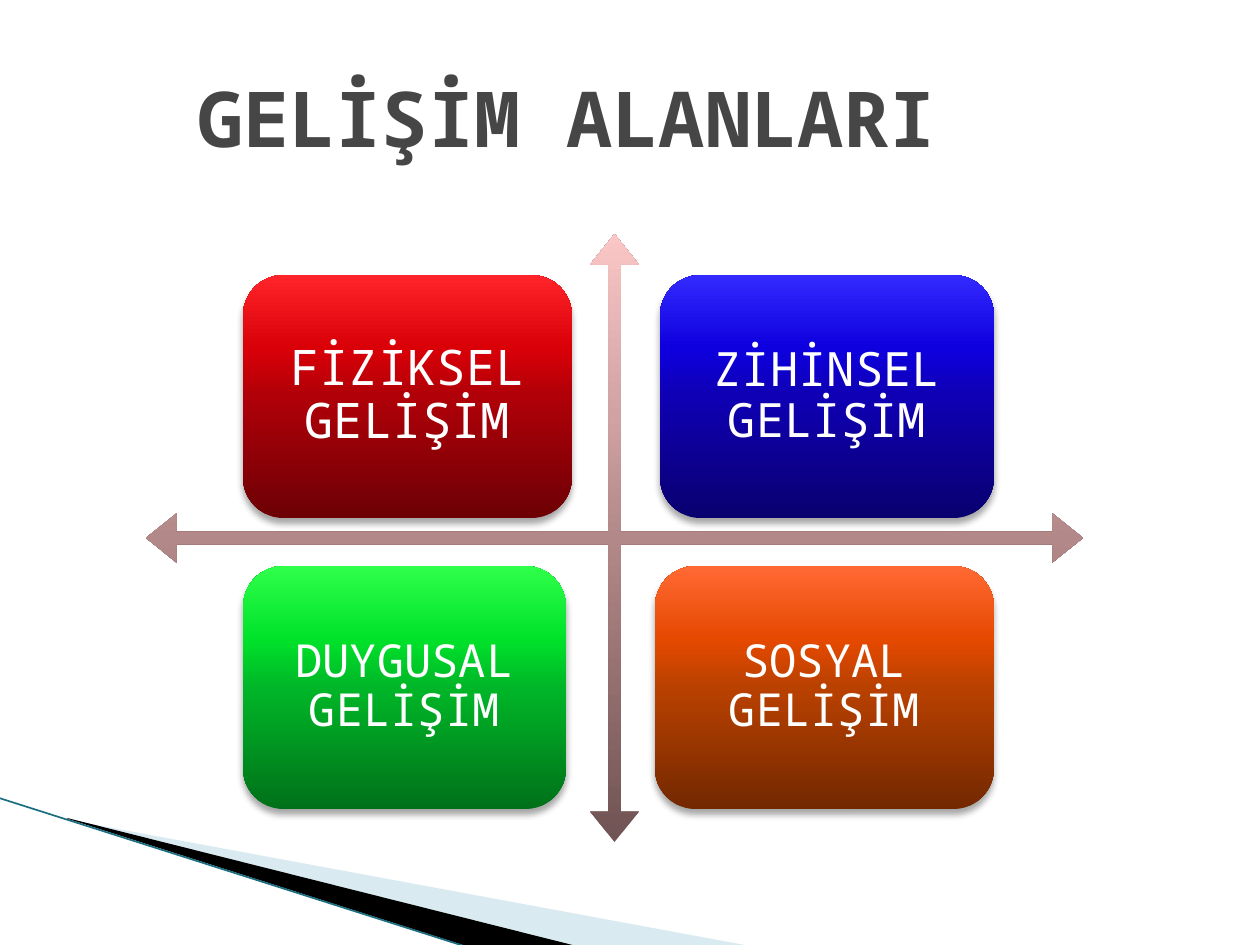
from lxml import etree
from pptx import Presentation
from pptx.dml.color import RGBColor
from pptx.enum.shapes import MSO_CONNECTOR, MSO_SHAPE
from pptx.enum.text import MSO_ANCHOR, PP_ALIGN
from pptx.oxml import parse_xml
from pptx.oxml.ns import nsdecls, qn
from pptx.util import Emu, Pt

STRAIGHT = MSO_CONNECTOR.STRAIGHT
QUAD_ARROW = MSO_SHAPE.QUAD_ARROW
ROUNDED = MSO_SHAPE.ROUNDED_RECTANGLE
MIDDLE = MSO_ANCHOR.MIDDLE
CENTER = PP_ALIGN.CENTER

SCALE = 914400 / 126
FONT = "Noto Sans Mono"
TITLE_ONLY = 5

WHITE = RGBColor(0xFF, 0xFF, 0xFF)
BLACK = RGBColor(0x00, 0x00, 0x00)
GREY = RGBColor(0x46, 0x46, 0x46)
PALE_BLUE = RGBColor(0xA0, 0xCB, 0xDC)
TEAL = RGBColor(0x1A, 0x6E, 0x80)


def rgbs(*codes):
    return [RGBColor.from_string(code) for code in codes]


STOPS = (0, 50, 70, 100)
ROSE = rgbs("705354", "B38888", "D0A2A2", "FBC6C6")
RED = rgbs("6D0005", "B00008", "DA0008", "FF2429")
BLUE = rgbs("09006F", "0F00B3", "0E00DE", "332AFF")
GREEN = rgbs("007119", "00B628", "00E22A", "2FFF4B")
ORANGE = rgbs("732800", "B94100", "E64900", "FF6933")

# label, left, top, width, font size, gradient
TILE_HEIGHT = 243
TILES = [
    ("FİZİKSEL GELİŞİM", 243, 275, 329, 28, RED),
    ("ZİHİNSEL GELİŞİM", 660, 275, 334, 27, BLUE),
    ("DUYGUSAL GELİŞİM", 243, 566, 323, 26, GREEN),
    ("SOSYAL GELİŞİM", 655, 566, 339, 26, ORANGE),
]


def px(n):
    return Emu(round(n * SCALE))


def fill_upward(sp, colors):
    """Fill a shape with a gradient running from bottom to top."""
    stops = "".join(
        f'<a:gs pos="{pos * 1000}"><a:srgbClr val="{color}"/></a:gs>'
        for pos, color in zip(STOPS, colors))
    grad = parse_xml(
        f'<a:gradFill {nsdecls("a")} rotWithShape="1"><a:gsLst>{stops}</a:gsLst>'
        f'<a:lin ang="{270 * 60000}" scaled="0"/></a:gradFill>')
    sp._element.spPr.find(qn("a:prstGeom")).addnext(grad)
    sp.line.fill.background()
    sp.shadow.inherit = False


def add_soft_shadow(sp):
    effects = sp._element.spPr.find(qn("a:effectLst"))
    effects.append(parse_xml(
        f'<a:outerShdw {nsdecls("a")} blurRad="{Pt(4)}" dist="{Pt(3)}" '
        f'dir="{90 * 60000}" rotWithShape="0">'
        f'<a:srgbClr val="{BLACK}"><a:alpha val="35000"/></a:srgbClr></a:outerShdw>'))


def write_text(sp, text, size, color, bold=False):
    tf = sp.text_frame
    tf.word_wrap = True
    tf.vertical_anchor = MIDDLE
    p = tf.paragraphs[0]
    p.text = text
    p.alignment = CENTER
    p.font.name = FONT
    p.font.size = Pt(size)
    p.font.bold = bold
    p.font.color.rgb = color
    return tf


def add_wedge(slide, points, color, opacity=100):
    builder = slide.shapes.build_freeform(*points[0], scale=SCALE)
    builder.add_line_segments(points[1:], close=True)
    sp = builder.convert_to_shape()
    sp.fill.solid()
    sp.fill.fore_color.rgb = color
    sp.line.fill.background()
    sp.shadow.inherit = False
    if opacity < 100:
        clr = sp._element.spPr.find(qn("a:solidFill"))[0]
        etree.SubElement(clr, qn("a:alpha")).set("val", str(opacity * 1000))


def add_edge(slide, x1, y1, x2, y2):
    line = slide.shapes.add_connector(STRAIGHT, px(x1), px(y1), px(x2), px(y2))
    line.line.color.rgb = TEAL
    line.line.width = Pt(0.95)
    etree.SubElement(line._element.spPr, qn("a:effectLst"))


def add_title(slide):
    title = slide.shapes.title
    title.left, title.top, title.width, title.height = map(px, (0, 38, 1134, 158))
    write_text(title, "GELİŞİM ALANLARI", 44, GREY, bold=True)


def add_cross(slide):
    sp = slide.shapes.add_shape(QUAD_ARROW, px(146), px(234), px(937), px(608))
    for i, value in enumerate((0.02, 0.04, 0.05)):
        sp.adjustments[i] = value
    fill_upward(sp, ROSE)


def add_tile(slide, label, left, top, width, size, colors):
    sp = slide.shapes.add_shape(ROUNDED, px(left), px(top), px(width), px(TILE_HEIGHT))
    fill_upward(sp, colors)
    add_soft_shadow(sp)
    tf = write_text(sp, label, size, WHITE)
    tf.margin_left = tf.margin_right = tf.margin_top = tf.margin_bottom = px(14)
    tf.paragraphs[0].line_spacing = 0.9


def main():
    prs = Presentation()
    prs.slide_width, prs.slide_height = px(1260), px(945)
    slide = prs.slides.add_slide(prs.slide_layouts[TITLE_ONLY])
    add_wedge(slide, [(69, 820), (750, 946), (575, 946), (69, 819)], PALE_BLUE, 40)
    add_wedge(slide, [(67, 818), (576, 946), (469, 947), (68, 819)], BLACK)
    add_edge(slide, -1, 798, 467, 947)
    add_title(slide)
    add_cross(slide)
    for tile in TILES:
        add_tile(slide, *tile)
    prs.save("out.pptx")


if __name__ == "__main__":
    main()
